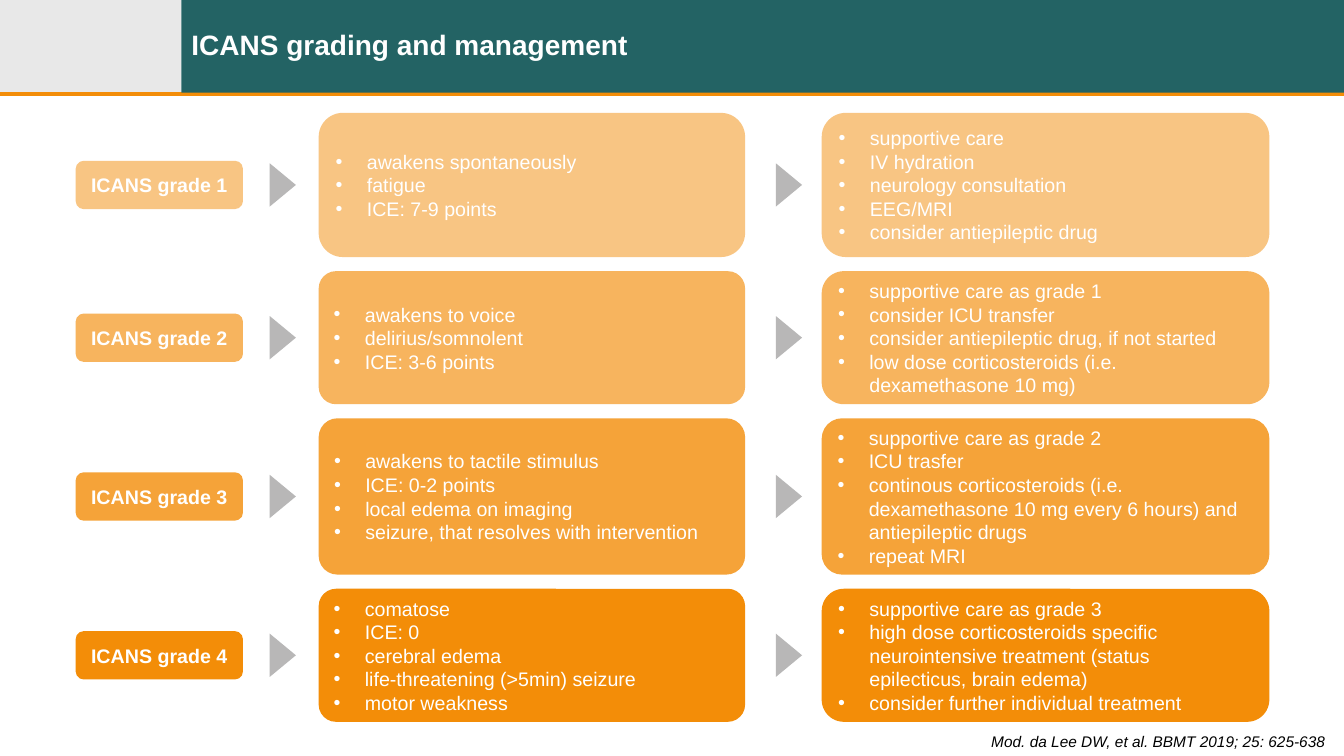
"""Build the ICANS grading and management slide."""
from dataclasses import dataclass

from lxml import etree
from pptx import Presentation
from pptx.dml.color import RGBColor
from pptx.enum.shapes import MSO_CONNECTOR, MSO_SHAPE
from pptx.enum.text import MSO_ANCHOR, PP_ALIGN
from pptx.oxml.ns import qn
from pptx.shapes.autoshape import Shape
from pptx.slide import Slide
from pptx.util import Inches, Pt

RECTANGLE = MSO_SHAPE.RECTANGLE
ROUNDED = MSO_SHAPE.ROUNDED_RECTANGLE
TRIANGLE = MSO_SHAPE.ISOSCELES_TRIANGLE
STRAIGHT = MSO_CONNECTOR.STRAIGHT
MIDDLE, TOP = MSO_ANCHOR.MIDDLE, MSO_ANCHOR.TOP
LEFT, CENTER, RIGHT = PP_ALIGN.LEFT, PP_ALIGN.CENTER, PP_ALIGN.RIGHT

SLIDE_WIDTH, SLIDE_HEIGHT = Inches(13.33), Inches(7.5)


@dataclass(frozen=True)
class Theme:
    font: str = "Arial"
    orange: str = "F38D08"
    teal: str = "236364"
    dark: str = "222222"
    grey: str = "B8B7B7"
    white: str = "FFFFFF"
    black: str = "000000"
    title_size: int = 20
    body_size: int = 14
    citation_size: int = 11
    rule_width: int = 3
    bullet_indent: float = 0.31


@dataclass(frozen=True)
class Box:
    """Left, top, width and height in percent of the slide."""
    left: float
    top: float
    width: float
    height: float

    def emu(self) -> tuple[int, int, int, int]:
        return (across(self.left), down(self.top),
                across(self.width), down(self.height))


@dataclass(frozen=True)
class Column:
    left: float
    width: float


@dataclass(frozen=True)
class Panel:
    items: tuple[str, ...]
    corner: float = 0.167


@dataclass(frozen=True)
class Grade:
    height: float
    opacity: int
    findings: Panel
    treatment: Panel


THEME = Theme()
HEADER_HEIGHT, HEADER_SPLIT, RULE_TOP = 12.27, 13.5, 12.4
LABELS = Column(5.63, 12.45)
FINDINGS = Column(23.71, 31.73)
TREATMENT = Column(61.14, 33.31)
ARROW_CENTERS = (21.04, 58.7)
ARROW_BASE, ARROW_DEPTH = 5.73, 1.95
FIRST_TOP, ROW_GAP, LABEL_HEIGHT = 14.93, 1.87, 6.4
CITATION = Box(25.58, 96.13, 74.12, 3.87)

GRADES = (
    Grade(19.07, 50,
          Panel(("awakens spontaneously", "fatigue", "ICE: 7-9 points")),
          Panel(("supportive care", "IV hydration", "neurology consultation",
                 "EEG/MRI", "consider antiepileptic drug"))),
    Grade(17.6, 65,
          Panel(("awakens to voice", "delirius/somnolent", "ICE: 3-6 points"), 0.13),
          Panel(("supportive care as grade 1", "consider ICU transfer",
                 "consider antiepileptic drug, if not started",
                 "low dose corticosteroids (i.e. dexamethasone 10 mg)"))),
    Grade(20.67, 80,
          Panel(("awakens to tactile stimulus", "ICE: 0-2 points",
                 "local edema on imaging",
                 "seizure, that resolves with intervention"), 0.12),
          Panel(("supportive care as grade 2", "ICU trasfer",
                 "continous corticosteroids (i.e. dexamethasone 10 mg every 6 hours)"
                 " and antiepileptic drugs", "repeat MRI"), 0.13)),
    Grade(17.6, 100,
          Panel(("comatose", "ICE: 0", "cerebral edema",
                 "life-threatening (>5min) seizure", "motor weakness"), 0.13),
          Panel(("supportive care as grade 3",
                 "high dose corticosteroids specific neurointensive treatment"
                 " (status epilecticus, brain edema)",
                 "consider further individual treatment"))),
)


def across(share: float) -> int:
    return round(SLIDE_WIDTH * share / 100)


def down(share: float) -> int:
    return round(SLIDE_HEIGHT * share / 100)


def add_block(slide: Slide, kind: int, box: Box, color: str, opacity: int = 100) -> Shape:
    block = slide.shapes.add_shape(kind, *box.emu())
    block.shadow.inherit = False
    block.line.fill.background()
    block.fill.solid()
    block.fill.fore_color.rgb = RGBColor.from_string(color)
    if opacity < 100:
        tint = block.fill._xPr.find(qn("a:solidFill"))[0]
        etree.SubElement(tint, qn("a:alpha"), val=str(opacity * 1000))
    return block


def write(block: Shape, lines: tuple[str, ...], size: int, color: str,
          align: int = LEFT, anchor: int = MIDDLE, bold: bool = False,
          italic: bool = False, bulleted: bool = False) -> None:
    frame = block.text_frame
    frame.word_wrap = True
    frame.vertical_anchor = anchor
    frame.text = "\n".join(lines)
    for paragraph in frame.paragraphs:
        paragraph.alignment = align
        if bulleted:
            properties = paragraph._p.get_or_add_pPr()
            indent = Inches(THEME.bullet_indent)
            properties.set("marL", str(indent))
            properties.set("indent", str(-indent))
            etree.SubElement(properties, qn("a:buFont"), typeface=THEME.font)
            etree.SubElement(properties, qn("a:buChar"), char="•")
        for run in paragraph.runs:
            run.font.name = THEME.font
            run.font.size = Pt(size)
            run.font.bold = bold
            run.font.italic = italic
            run.font.color.rgb = RGBColor.from_string(color)


def add_header(slide: Slide) -> None:
    add_block(slide, RECTANGLE, Box(0, 0, HEADER_SPLIT, HEADER_HEIGHT), THEME.dark, 10)
    rule = slide.shapes.add_connector(
        STRAIGHT, 0, down(RULE_TOP), SLIDE_WIDTH, down(RULE_TOP))
    rule.line.color.rgb = RGBColor.from_string(THEME.orange)
    rule.line.width = Pt(THEME.rule_width)
    etree.SubElement(rule._element.spPr, qn("a:effectLst"))
    banner = Box(HEADER_SPLIT, 0, 100 - HEADER_SPLIT, HEADER_HEIGHT)
    add_block(slide, RECTANGLE, banner, THEME.teal)
    title = slide.shapes.add_textbox(*banner.emu())
    write(title, ("ICANS grading and management",), THEME.title_size, THEME.white, bold=True)
    title.text_frame.paragraphs[0].line_spacing = 0.9


def add_arrow(slide: Slide, center: float, middle: int) -> None:
    base, depth = down(ARROW_BASE), across(ARROW_DEPTH)
    arrow = add_block(slide, TRIANGLE, Box(0, 0, 1, 1), THEME.grey)
    arrow.width, arrow.height = base, depth
    arrow.left = across(center) - base // 2
    arrow.top = middle - depth // 2
    arrow.rotation = 90


def add_grade(slide: Slide, number: int, grade: Grade, top: float) -> None:
    middle = top + grade.height / 2
    label_box = Box(LABELS.left, middle - LABEL_HEIGHT / 2, LABELS.width, LABEL_HEIGHT)
    label = add_block(slide, ROUNDED, label_box, THEME.orange, grade.opacity)
    write(label, (f"ICANS grade {number}",), THEME.body_size, THEME.white,
          align=CENTER, bold=True)
    for column, panel in ((FINDINGS, grade.findings), (TREATMENT, grade.treatment)):
        card = add_block(slide, ROUNDED, Box(column.left, top, column.width, grade.height),
                         THEME.orange, grade.opacity)
        card.adjustments[0] = panel.corner
        write(card, panel.items, THEME.body_size, THEME.white, bulleted=True)
    for center in ARROW_CENTERS:
        add_arrow(slide, center, down(middle))


def main() -> None:
    deck = Presentation()
    deck.slide_width, deck.slide_height = SLIDE_WIDTH, SLIDE_HEIGHT
    slide = deck.slides.add_slide(deck.slide_layouts[6])
    add_header(slide)
    top = FIRST_TOP
    for number, grade in enumerate(GRADES, start=1):
        add_grade(slide, number, grade, top)
        top += grade.height + ROW_GAP
    citation = slide.shapes.add_textbox(*CITATION.emu())
    write(citation, ("Mod. da Lee DW, et al. BBMT 2019; 25: 625-638 ",),
          THEME.citation_size, THEME.black, align=RIGHT, anchor=TOP, italic=True)
    deck.save("out.pptx")


if __name__ == "__main__":
    main()
